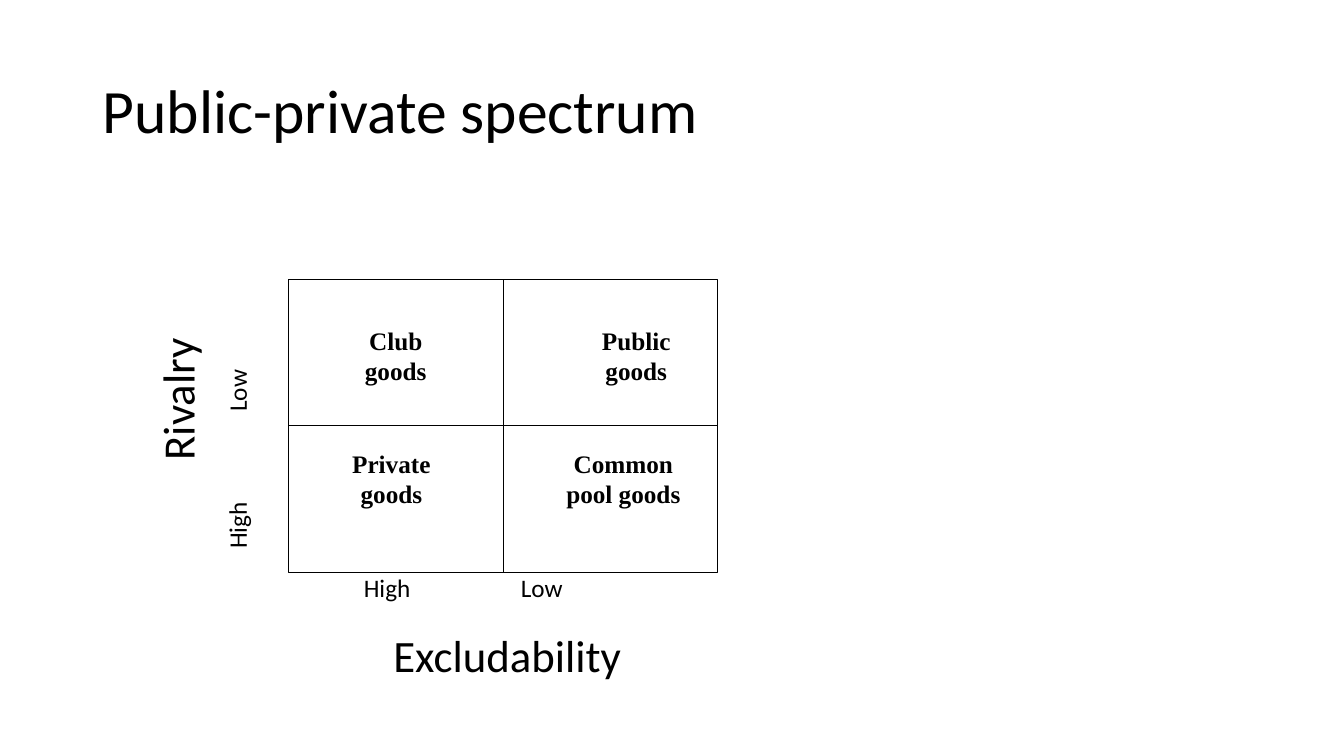
from pptx import Presentation
from pptx.dml.color import RGBColor
from pptx.enum.shapes import MSO_SHAPE as Shape
from pptx.enum.text import MSO_ANCHOR as Anchor, PP_ALIGN as Align
from pptx.util import Inches, Pt

COLORS = {"ink": "000000"}
MATRIX = (2.86, 2.77, 4.26, 2.91)  # left, top, width, height in inches

# Positions below are centres, as shares of the matrix width and height
GOODS = [
    ("Club\ngoods", 0.25, 0.26),
    ("Public\ngoods", 0.81, 0.26),
    ("Private\ngoods", 0.24, 0.68),
    ("Common\npool goods", 0.78, 0.68),
]
EXCLUDABILITY = [("High", 0.23, 1.05, 18), ("Low", 0.59, 1.05, 18),
                 ("Excludability", 0.51, 1.28, 32)]
RIVALRY = [("High", -0.12, 0.84, 18), ("Low", -0.12, 0.38, 18),
           ("Rivalry", -0.26, 0.41, 32)]


def write(frame, text, size=18, font="Calibri", bold=False, align=Align.CENTER,
          spacing=1.0):
    frame.word_wrap = True
    frame.vertical_anchor = Anchor.MIDDLE
    frame.text = text
    for line in frame.paragraphs:
        line.alignment = align
        line.line_spacing = spacing
        for run in line.runs:
            run.font.size = Pt(size)
            run.font.name = font
            run.font.bold = bold
            run.font.color.rgb = RGBColor.from_string(COLORS["ink"])


def add_label(slide, box, text, x, y, width, height, rotation=0, **text_format):
    """Place a label centred on shares (x, y) of the box."""
    left, top, box_width, box_height = box
    label = slide.shapes.add_textbox(
        Inches(left + x * box_width - width / 2),
        Inches(top + y * box_height - height / 2),
        Inches(width), Inches(height))
    label.rotation = rotation
    write(label.text_frame, text, **text_format)


def add_title(slide, box):
    title = slide.shapes.title
    title.left, title.top, title.width, title.height = map(Inches, box)
    write(title.text_frame, "Public-private spectrum", size=44,
          align=Align.LEFT, spacing=0.9)


def add_goods_matrix(slide, box):
    left, top, width, height = box
    # Two by two quadrants
    for row in range(2):
        for column in range(2):
            quadrant = slide.shapes.add_shape(
                Shape.RECTANGLE,
                Inches(left + column * width / 2), Inches(top + row * height / 2),
                Inches(width / 2), Inches(height / 2))
            quadrant.shadow.inherit = False
            quadrant.fill.background()
            quadrant.line.color.rgb = RGBColor.from_string(COLORS["ink"])
            quadrant.line.width = Pt(0.75)
    # Type of good in each quadrant
    for goods, x, y in GOODS:
        add_label(slide, box, goods, x, y, 1.6, 0.7,
                  font="Times New Roman", bold=True)


def add_axis(slide, box, labels, rotation=0):
    for text, x, y, size in labels:
        add_label(slide, box, text, x, y, len(text) * size / 120 + 0.4,
                  size / 50, rotation, size=size)


def main():
    deck = Presentation()
    deck.slide_width, deck.slide_height = Inches(13.33), Inches(7.5)
    slide = deck.slides.add_slide(deck.slide_layouts[5])
    add_title(slide, (0.92, 0.4, 11.5, 1.45))
    add_goods_matrix(slide, MATRIX)
    add_axis(slide, MATRIX, EXCLUDABILITY)
    add_axis(slide, MATRIX, RIVALRY, rotation=270)
    deck.save("out.pptx")


if __name__ == "__main__":
    main()
